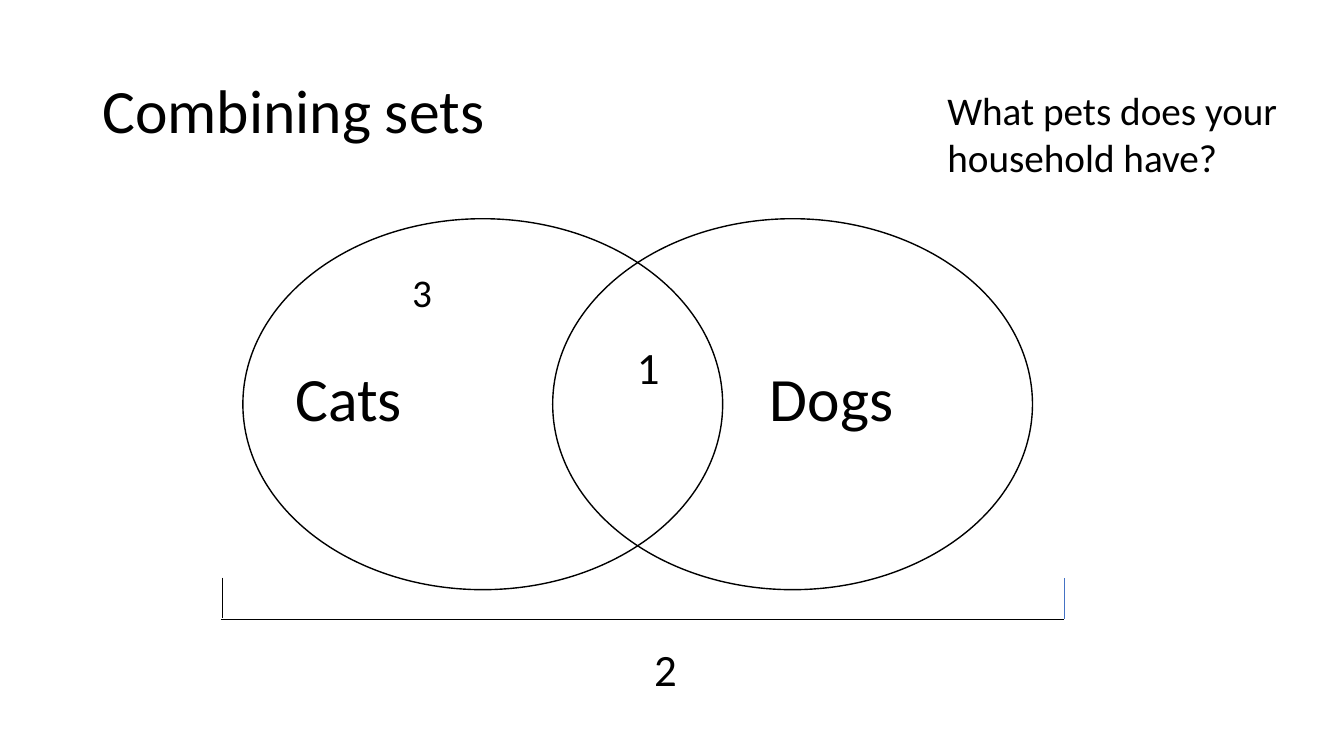
from dataclasses import dataclass

from lxml import etree
from pptx import Presentation
from pptx.dml.color import RGBColor
from pptx.enum.shapes import MSO_CONNECTOR, MSO_SHAPE
from pptx.enum.text import MSO_ANCHOR, MSO_AUTO_SIZE, PP_ALIGN
from pptx.oxml.ns import qn
from pptx.slide import Slide
from pptx.text.text import TextFrame
from pptx.util import Inches, Pt

ELLIPSE = MSO_SHAPE.OVAL
STRAIGHT = MSO_CONNECTOR.STRAIGHT
LEFT = PP_ALIGN.LEFT
MIDDLE = MSO_ANCHOR.MIDDLE
FIT_SHAPE = MSO_AUTO_SIZE.SHAPE_TO_FIT_TEXT
NO_FIT = MSO_AUTO_SIZE.NONE

FONT = "Calibri"
COLOURS = {"ink": "000000", "accent": "4472C4"}
SLIDE_WIDTH, SLIDE_HEIGHT = Inches(40 / 3), Inches(7.5)
COLUMN, ROW = SLIDE_WIDTH / 40, SLIDE_HEIGHT / 30
TITLE_ONLY = 5


@dataclass(frozen=True)
class Area:
    column: float
    row: float
    columns: float
    rows: float

    def box(self) -> tuple[int, int, int, int]:
        return (
            round(self.column * COLUMN),
            round(self.row * ROW),
            round(self.columns * COLUMN),
            round(self.rows * ROW),
        )


@dataclass(frozen=True)
class Label:
    words: str
    area: Area
    size: int
    wrap: bool = True


@dataclass(frozen=True)
class BracketSide:
    start: tuple[float, float]
    end: tuple[float, float]
    colour: str = "ink"


TITLE = Label("Combining sets", Area(2.75, 1.6, 34.5, 5.8), 44)

SETS = [Area(column, 8.68, 14.28, 14.72) for column in (16.45, 7.23)]

LABELS = [
    Label("Cats", Area(8.5, 14.08, 7, 3.36), 44),
    Label("Dogs", Area(22.62, 14.08, 7, 3.36), 44),
    Label("3", Area(11.97, 10.44, 2.01, 2.28), 28),
    Label("1", Area(18.66, 13.28, 1.29, 2.56), 32, wrap=False),
    Label("2", Area(19.17, 25.28, 1.29, 2.56), 32, wrap=False),
    Label("What pets does your household have?", Area(27.9, 3.24, 10.86, 4.16), 28),
]

BRACKET = [
    BracketSide((6.57, 24.56), (31.68, 24.56)),
    BracketSide((6.63, 22.92), (6.63, 24.52)),
    BracketSide((31.68, 24.56), (31.68, 22.92), "accent"),
]


def rgb(colour: str) -> RGBColor:
    return RGBColor.from_string(COLOURS[colour])


def write(frame: TextFrame, label: Label) -> None:
    frame.text = label.words
    frame.word_wrap = label.wrap
    paragraph = frame.paragraphs[0]
    paragraph.alignment = LEFT
    font = paragraph.runs[0].font
    font.name = FONT
    font.size = Pt(label.size)
    font.color.rgb = rgb("ink")


def add_title(slide: Slide, label: Label) -> None:
    heading = slide.shapes.title
    heading.left, heading.top, heading.width, heading.height = label.area.box()
    write(heading.text_frame, label)
    heading.text_frame.auto_size = NO_FIT
    heading.text_frame.vertical_anchor = MIDDLE
    heading.text_frame.paragraphs[0].line_spacing = 0.9


def add_set(slide: Slide, area: Area) -> None:
    outline = slide.shapes.add_shape(ELLIPSE, *area.box())
    outline.shadow.inherit = False
    outline.fill.background()
    outline.line.color.rgb = rgb("ink")
    outline.line.width = Pt(1)


def add_label(slide: Slide, label: Label) -> None:
    frame = slide.shapes.add_textbox(*label.area.box()).text_frame
    write(frame, label)
    frame.auto_size = FIT_SHAPE


def add_bracket_side(slide: Slide, side: BracketSide) -> None:
    ends = [
        round(place * unit)
        for point in (side.start, side.end)
        for place, unit in zip(point, (COLUMN, ROW))
    ]
    stroke = slide.shapes.add_connector(STRAIGHT, *ends)
    stroke.line.color.rgb = rgb(side.colour)
    stroke.line.width = Pt(0.5)
    etree.SubElement(stroke._element.spPr, qn("a:effectLst"))


def main() -> None:
    deck = Presentation()
    deck.slide_width, deck.slide_height = SLIDE_WIDTH, SLIDE_HEIGHT
    slide = deck.slides.add_slide(deck.slide_layouts[TITLE_ONLY])
    add_title(slide, TITLE)
    for area in SETS:
        add_set(slide, area)
    for label in LABELS:
        add_label(slide, label)
    for side in BRACKET:
        add_bracket_side(slide, side)
    deck.save("out.pptx")


if __name__ == "__main__":
    main()
